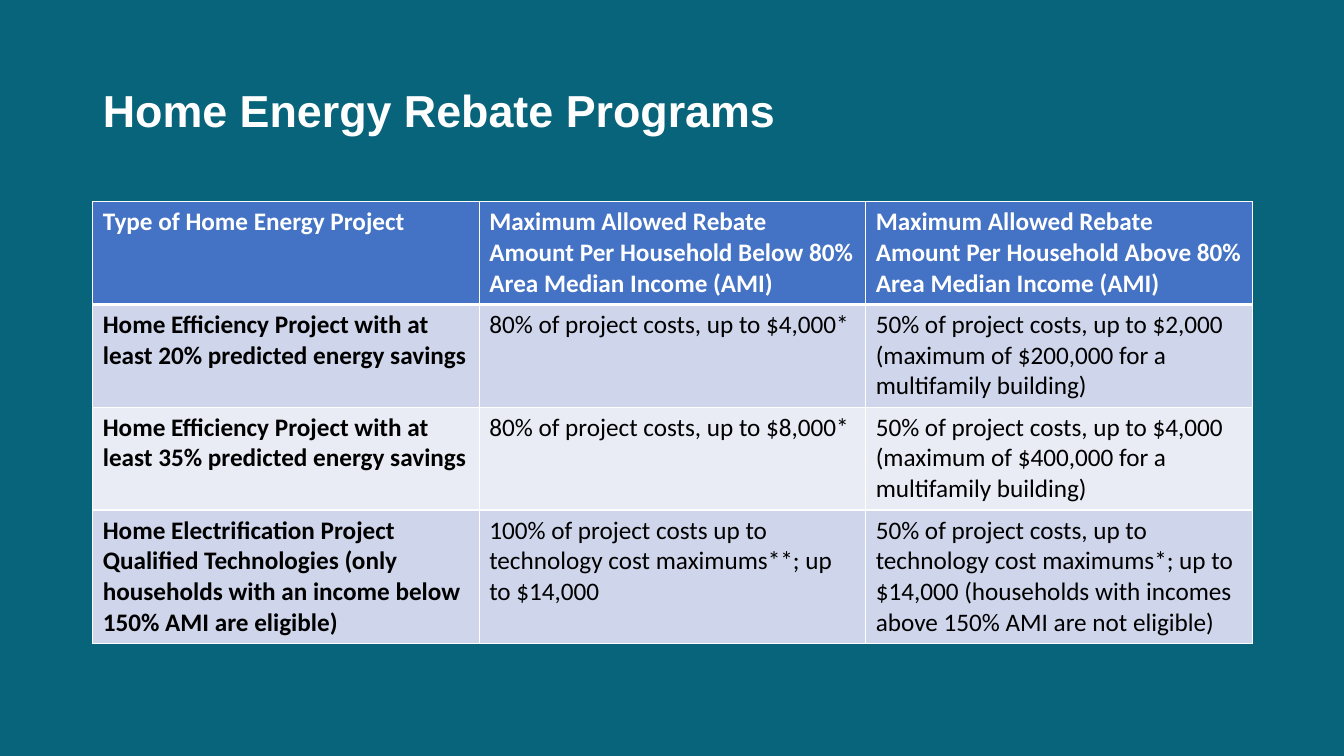
from lxml import etree
from pptx import Presentation
from pptx import util as u
from pptx.dml.color import RGBColor
from pptx.enum import shapes, text
from pptx.oxml import ns

TEAL, BLUE, WHITE, BLACK = "07647B", "4472C4", "FFFFFF", "000000"
BANDS = ["CFD5EA", "E9EBF5"]

REBATES = [
    ["Type of Home Energy Project",
     "Maximum Allowed Rebate Amount Per Household Below 80% Area Median Income (AMI)",
     "Maximum Allowed Rebate Amount Per Household Above 80% Area Median Income (AMI)"],
    ["Home Efficiency Project with at least 20% predicted energy savings",
     "80% of project costs, up to $4,000*",
     "50% of project costs, up to $2,000 (maximum of $200,000 for a multifamily building)"],
    ["Home Efficiency Project with at least 35% predicted energy savings",
     "80% of project costs, up to $8,000*",
     "50% of project costs, up to $4,000 (maximum of $400,000 for a multifamily building)"],
    ["Home Electrification Project Qualified Technologies "
     "(only households with an income below 150% AMI are eligible)",
     "100% of project costs up to technology cost maximums**; up to $14,000",
     "50% of project costs, up to technology cost maximums*; up to $14,000 "
     "(households with incomes above 150% AMI are not eligible)"],
]
ROW_HEIGHTS = [1.02, 1.02, 1.02, 1.32]


def color(value):
    return RGBColor.from_string(value)


class RebateSlide:
    """Holds the style and the current slide."""
    heading_font, table_font = "Arial", "Calibri"

    def __init__(self, deck):
        self.slide = deck.slides.add_slide(deck.slide_layouts[5])

    def run(self, paragraph, wording, font, size, ink, bold):
        run = paragraph.add_run()
        run.text = wording
        run.font.name, run.font.size, run.font.bold = font, u.Pt(size), bold
        run.font.color.rgb = color(ink)

    def backdrop(self, left, top, width, height, fill):
        panel = self.slide.shapes.add_shape(
            shapes.MSO_SHAPE.RECTANGLE, *map(u.Inches, (left, top, width, height)))
        panel.shadow.inherit = False
        panel.fill.solid()
        panel.fill.fore_color.rgb = color(fill)
        panel.line.fill.background()
        self.slide.shapes.title.element.addprevious(panel.element)

    def title(self, wording, left, top, width, height):
        heading = self.slide.shapes.title
        heading.left, heading.top = u.Inches(left), u.Inches(top)
        heading.width, heading.height = u.Inches(width), u.Inches(height)
        frame = heading.text_frame
        frame.word_wrap = True
        frame.auto_size = text.MSO_AUTO_SIZE.NONE
        frame.vertical_anchor = text.MSO_ANCHOR.MIDDLE
        paragraph = frame.paragraphs[0]
        paragraph.alignment = text.PP_ALIGN.LEFT
        paragraph.line_spacing = 0.9
        self.run(paragraph, wording, self.heading_font, 32, WHITE, True)

    def borders(self, cell, widths):
        properties = cell._tc.get_or_add_tcPr()
        for index, (side, points) in enumerate(widths.items()):
            line = etree.Element(ns.qn(f"a:ln{side}"), w=str(u.Pt(points)))
            fill = etree.SubElement(line, ns.qn("a:solidFill"))
            etree.SubElement(fill, ns.qn("a:srgbClr"), val=WHITE)
            properties.insert(index, line)

    def table(self, rows, heights, left, top, width):
        grid = self.slide.shapes.add_table(
            len(rows), len(rows[0]), u.Inches(left), u.Inches(top),
            u.Inches(width), u.Inches(sum(heights))).table
        for r, (row, height) in enumerate(zip(rows, heights)):
            grid.rows[r].height = u.Inches(height)
            header = r == 0
            for c, wording in enumerate(row):
                cell = grid.cell(r, c)
                cell.fill.solid()
                cell.fill.fore_color.rgb = color(BLUE if header else BANDS[(r - 1) % 2])
                self.borders(cell, {"L": 1, "R": 1, "T": 3 if r == 1 else 1,
                                    "B": 3 if header else 1})
                self.run(cell.text_frame.paragraphs[0], wording, self.table_font, 18,
                         WHITE if header else BLACK, header or c == 0)


def main():
    deck = Presentation()
    deck.slide_width, deck.slide_height = u.Inches(13.33), u.Inches(7.5)
    page = RebateSlide(deck)

    # Background and heading
    page.backdrop(-0.01, 0, 13.35, 7.5, TEAL)
    page.title("Home Energy Rebate Programs", 0.92, 0.4, 11.5, 1.45)

    # Rebate limits by project type and income
    page.table(REBATES, ROW_HEIGHTS, 0.92, 2, 11.5)

    deck.save("out.pptx")


if __name__ == "__main__":
    main()
